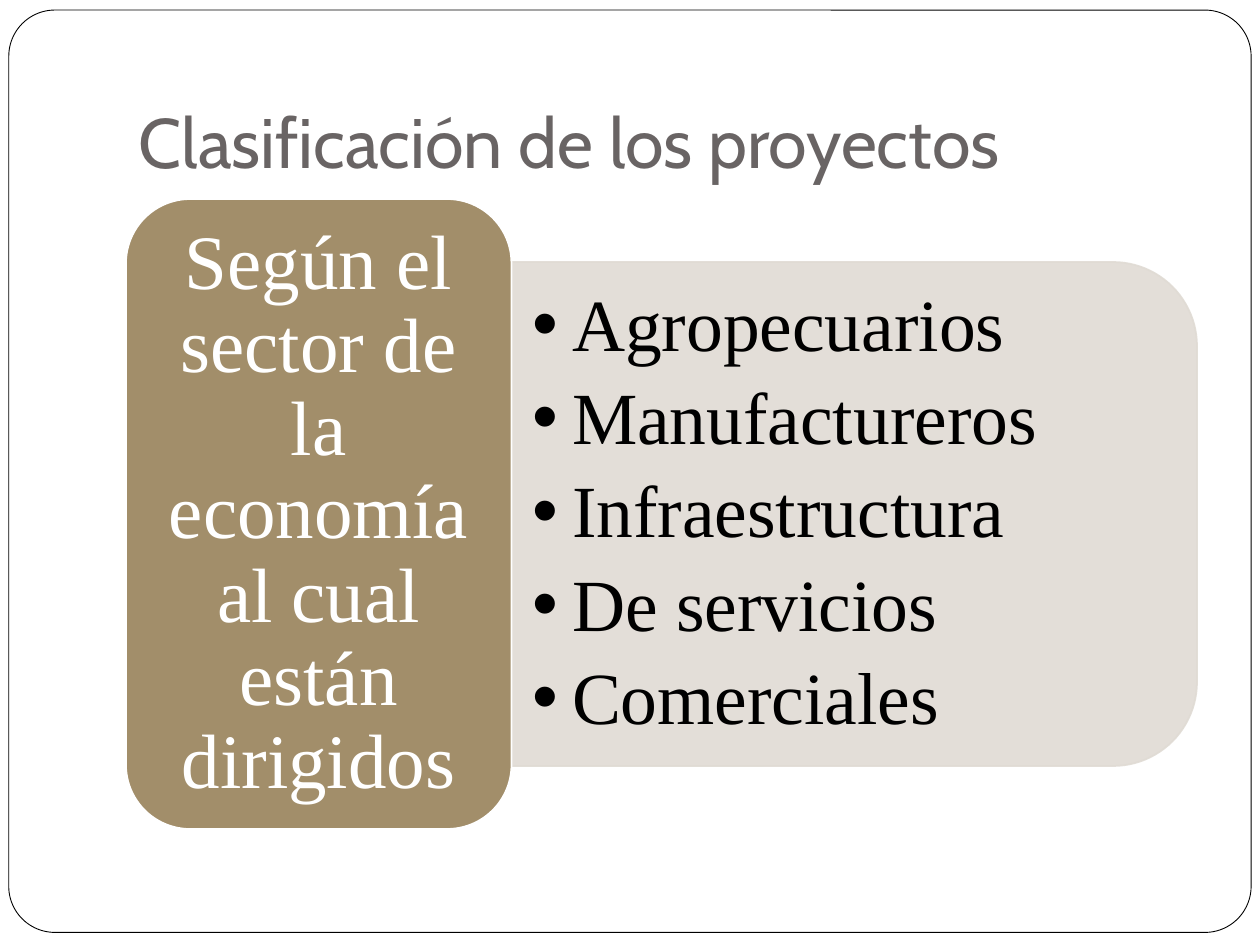
from lxml import etree
from pptx import Presentation, util as u
from pptx.dml.color import RGBColor
from pptx.enum import shapes, text
from pptx.oxml.ns import qn

# Content
TITLE = "Clasificación de los proyectos"
GROUP = "Según el sector de la economía al cual están dirigidos"
ITEMS = ["Agropecuarios", "Manufactureros", "Infraestructura",
         "De servicios", "Comerciales"]
HEX = {"white": "FFFFFF", "black": "000000", "gray": "696464",
       "sand": "E0DBD4", "tan": "A28E6A"}
SERIF = "Times New Roman"

# Layout in inches: card and panel share a middle line
WIDE, HIGH = 10, 7.5
LEFT, RIGHT, MID = 1, 9.5, 4.08
CARD_W, CARD_H = 3.06, 5
PANEL_H, LIST_H = 4, 3.61
EDGE = LEFT + CARD_W
PANEL_W = RIGHT - EDGE


def color(name):
    return RGBColor.from_string(HEX[name])


def place(item, left, top, width, height):
    item.left, item.top = u.Inches(left), u.Inches(top)
    item.width, item.height = u.Inches(width), u.Inches(height)


def draw(kind, box, fill, line, weight):
    item = slide.shapes.add_shape(kind, *map(u.Inches, box))
    item.shadow.inherit = False
    item.fill.solid()
    item.fill.fore_color.rgb = color(fill)
    item.line.color.rgb = color(line)
    item.line.width = u.Pt(weight)
    return item


def setup(frame, anchor, side, top, bottom):
    frame.word_wrap = True
    frame.auto_size = text.MSO_AUTO_SIZE.NONE
    frame.vertical_anchor = anchor
    frame.margin_left = frame.margin_right = u.Inches(side)
    frame.margin_top, frame.margin_bottom = u.Inches(top), u.Inches(bottom)


def write(para, words, font, size, tint, align, spacing=1.0, after=0):
    para.alignment = align
    para.line_spacing = spacing
    para.space_before, para.space_after = u.Pt(0), u.Pt(after)
    run = para.add_run()
    run.text = words
    run.font.name, run.font.size = font, u.Pt(size)
    run.font.color.rgb = color(tint)


def bullet(para, indent):
    props = para._p.get_or_add_pPr()
    props.set("marL", str(u.Inches(indent)))
    props.set("indent", str(-u.Inches(indent)))
    etree.SubElement(props, qn("a:buChar")).set("char", "•")


deck = Presentation()
deck.slide_width, deck.slide_height = u.Inches(WIDE), u.Inches(HIGH)
slide = deck.slides.add_slide(deck.slide_layouts[1])
title, body = slide.placeholders
kinds = shapes.MSO_SHAPE
align, anchor = text.PP_ALIGN, text.MSO_ANCHOR

# Slide border
border = draw(kinds.ROUNDED_RECTANGLE, (0.07, 0.08, 9.86, 7.32),
              "white", "black", 0.5)
border.adjustments[0] = 0.05

# Title
place(title, LEFT, 0.3, RIGHT - LEFT, 1.25)
setup(title.text_frame, anchor.BOTTOM, 0.1, 0.05, 0.1)
write(title.text_frame.paragraphs[0], TITLE, "Cabin", 40, "gray", align.LEFT)

# Panel: a top-rounded box turned so its round side faces right
center = EDGE + PANEL_W / 2
panel = draw(kinds.ROUND_2_SAME_RECTANGLE,
             (center - PANEL_H / 2, MID - PANEL_W / 2, PANEL_H, PANEL_W),
             "sand", "sand", 1)
panel.rotation = 90
for tint in panel._element.spPr.iter(qn("a:srgbClr")):
    etree.SubElement(tint, qn("a:alpha")).set("val", "90000")

# List of sectors
place(body, EDGE, MID - LIST_H / 2, 5.24, LIST_H)
frame = body.text_frame
setup(frame, anchor.MIDDLE, 0.17, 0.09, 0.09)
for i, item in enumerate(ITEMS):
    para = frame.add_paragraph() if i else frame.paragraphs[0]
    bullet(para, 0.31)
    write(para, item, SERIF, 42, "black", align.LEFT, 0.9, 8)

# Card naming the criterion
card = draw(kinds.ROUNDED_RECTANGLE,
            (LEFT, MID - CARD_H / 2, CARD_W, CARD_H), "tan", "white", 1)
setup(card.text_frame, anchor.MIDDLE, 0.18, 0.09, 0.09)
write(card.text_frame.paragraphs[0], GROUP, SERIF, 44, "white",
      align.CENTER, 0.9)

# Stack from back to front
for part in (border, title, panel, body, card):
    slide.shapes._spTree.append(part._element)

deck.save("out.pptx")
